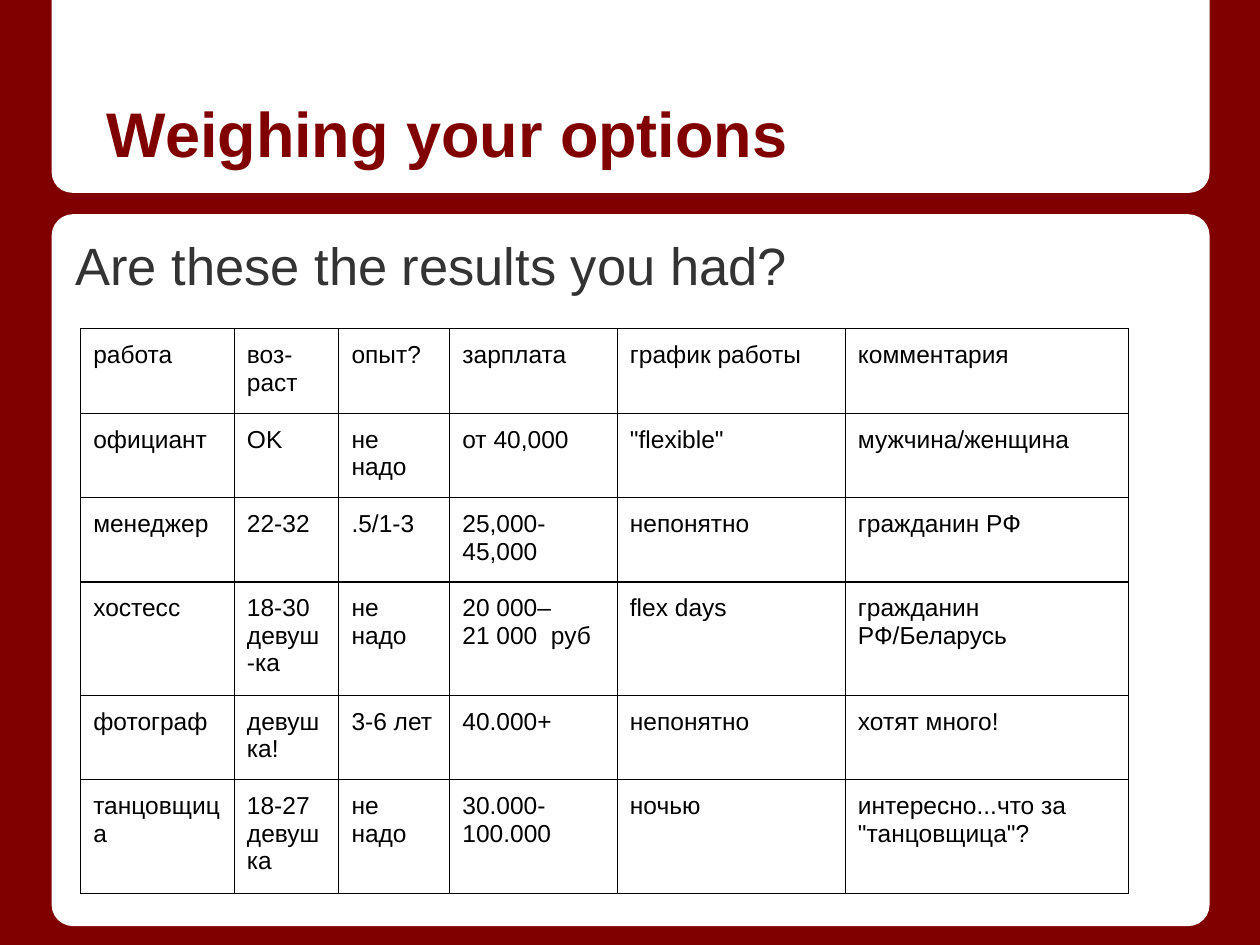
from pptx import Presentation
from pptx.dml.color import RGBColor
from pptx.enum.shapes import MSO_SHAPE as Shape
from pptx.enum.text import MSO_ANCHOR as Anchor
from pptx.oxml import parse_xml
from pptx.oxml.ns import nsdecls
from pptx.util import Inches, Pt

COLORS = {"maroon": "800000", "panel": "FFFFFF", "body": "333333", "table": "000000"}
MARGINS = ("margin_left", "margin_top", "margin_right", "margin_bottom")


def write_text(frame, text, size, color, bold=False):
    """Fill a text frame, one paragraph per line of text."""
    for margin in MARGINS:
        setattr(frame, margin, Inches(0.1))
    frame.word_wrap = True
    frame.text = text
    font_format = {"name": "Arial", "size": Pt(size), "bold": bold}
    for paragraph in frame.paragraphs:
        for run in paragraph.runs:
            for name, value in font_format.items():
                setattr(run.font, name, value)
            run.font.color.rgb = RGBColor.from_string(COLORS[color])


def border_xml(side):
    return parse_xml(
        f'<a:{side} {nsdecls("a")} w="{Pt(0.75)}"><a:solidFill>'
        f'<a:srgbClr val="{COLORS["table"]}"/></a:solidFill></a:{side}>')


presentation = Presentation()
presentation.slide_width = Inches(10)
presentation.slide_height = Inches(7.5)
slide = presentation.slides.add_slide(presentation.slide_layouts[6])
slide.background.fill.solid()
slide.background.fill.fore_color.rgb = RGBColor.from_string(COLORS["maroon"])

# White panels; the upper one is turned so its round corners face down
panels = [
    (Shape.ROUNDED_RECTANGLE, 1.7, 5.65, [0.03], 0),
    (Shape.ROUND_2_SAME_RECTANGLE, 0, 1.53, [0.106, 0], 180),
]
for kind, top, height, adjustments, rotation in panels:
    panel = slide.shapes.add_shape(
        kind, Inches(0.41), Inches(top), Inches(9.19), Inches(height))
    for index, value in enumerate(adjustments):
        panel.adjustments[index] = value
    panel.rotation = rotation
    panel.shadow.inherit = False
    panel.fill.solid()
    panel.fill.fore_color.rgb = RGBColor.from_string(COLORS["panel"])
    panel.line.fill.background()

# Title and question
headings = [
    ("Weighing your options", 0.2, 1.25, 36, "maroon", True, Anchor.BOTTOM, 0, 0.25, 0),
    ("Are these the results you had?", 1.75, 0.83, 30, "body", False, Anchor.TOP,
     0.38, -0.38, 6),
]
for text, top, height, size, color, bold, anchor, margin, indent, space in headings:
    box = slide.shapes.add_textbox(Inches(0.5), Inches(top), Inches(9), Inches(height))
    write_text(box.text_frame, text, size, color, bold)
    box.text_frame.vertical_anchor = anchor
    paragraph = box.text_frame.paragraphs[0]
    paragraph.space_before = Pt(space)
    properties = paragraph._p.get_or_add_pPr()
    properties.set("marL", str(Inches(margin)))
    properties.set("indent", str(Inches(indent)))

# Job comparison table
jobs = [
    ["работа", "воз-\nраст", "опыт?", "зарплата", "график работы", "комментария"],
    ["официант", "OK", "не надо", "от 40,000", '"flexible"', "мужчина/женщина"],
    ["менеджер", "22-32", ".5/1-3", "25,000-\n45,000", "непонятно", "гражданин РФ"],
    ["хостесс", "18-30\nдевуш-ка", "не надо", "20 000–\n21 000  руб", "flex days",
     "гражданин РФ/Беларусь"],
    ["фотограф", "девушка!", "3-6 лет", "40.000+", "непонятно", "хотят много!"],
    ["танцовщица", "18-27\nдевушка", "не надо", "30.000-\n100.000", "ночью",
     'интересно...что за "танцовщица"?'],
]
column_widths = [1.22, 0.83, 0.88, 1.33, 1.81, 2.25]
row_heights = [0.67, 0.67, 0.67, 0.9, 0.67, 0.9]
table = slide.shapes.add_table(
    len(jobs), len(column_widths), Inches(0.64), Inches(2.61),
    Inches(sum(column_widths)), Inches(sum(row_heights))).table
table.first_row = False
table.horz_banding = False
for column, width in zip(table.columns, column_widths):
    column.width = Inches(width)
for row, height, texts in zip(table.rows, row_heights, jobs):
    row.height = Inches(height)
    for cell, text in zip(row.cells, texts):
        write_text(cell.text_frame, text, 14, "table")
        for margin in MARGINS:
            setattr(cell, margin, Inches(0.1))
        cell_properties = cell._tc.get_or_add_tcPr()
        for side in ("lnL", "lnR", "lnT", "lnB"):
            cell_properties.append(border_xml(side))
        cell.fill.background()

presentation.save("out.pptx")
